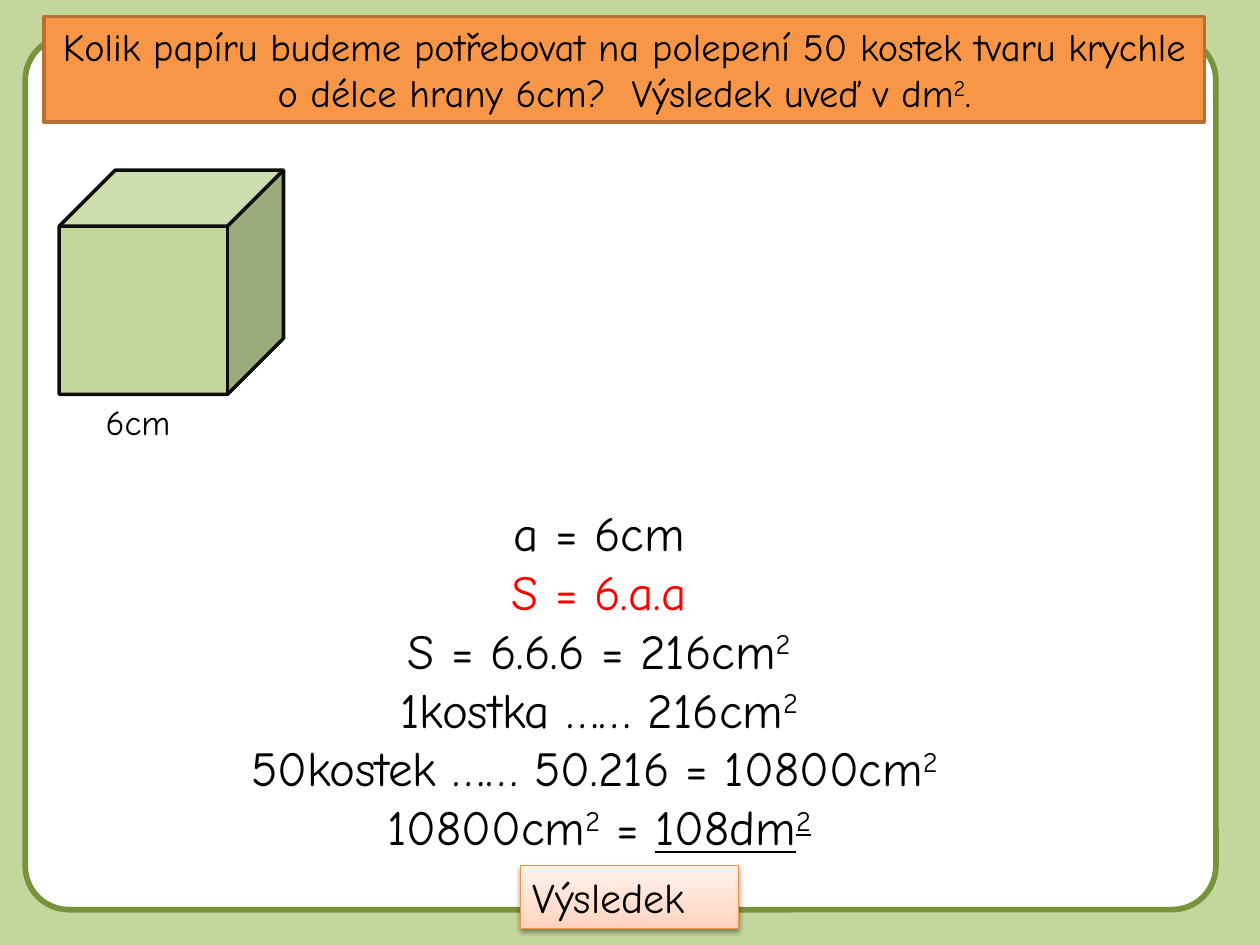
from lxml.etree import SubElement
from pptx import Presentation
from pptx.dml.color import RGBColor
from pptx.enum.shapes import MSO_SHAPE
from pptx.enum.text import MSO_ANCHOR, MSO_AUTO_SIZE, PP_ALIGN
from pptx.oxml import parse_xml
from pptx.oxml.ns import nsdecls, qn
from pptx.util import Inches, Pt

COLORS = {
    "back": "C3D69B", "panel": "FFFFFF", "frame": "77933C",
    "title": "F79646", "edge": "B76F34", "cube": "C3D69B",
    "ink": "0D0D0D", "text": "000000", "rule": "FF0000", "button": "F69240",
}
FADE = [(0, "FFD2BD"), (35, "FFDED0"), (100, "FFF2ED")]


def color(name):
    return RGBColor.from_string(COLORS[name])


def shadow(blur, dist, alpha):
    return parse_xml(
        f'<a:effectLst {nsdecls("a")}><a:outerShdw blurRad="{Pt(blur)}" '
        f'dist="{Pt(dist)}" dir="5400000" rotWithShape="0">'
        f'<a:srgbClr val="{COLORS["text"]}"><a:alpha val="{alpha * 1000}"/>'
        '</a:srgbClr></a:outerShdw></a:effectLst>')


class Painter:
    font = "Comic Neue"

    def __init__(self, slide):
        self.slide = slide

    def ground(self, name):
        fill = self.slide.background.fill
        fill.solid()
        fill.fore_color.rgb = color(name)

    def shape(self, kind, box, fill, line, width):
        item = self.slide.shapes.add_shape(kind, *map(Inches, box))
        item.shadow.inherit = False
        if fill:
            item.fill.solid()
            item.fill.fore_color.rgb = color(fill)
        item.line.color.rgb = color(line)
        item.line.width = Pt(width)
        return item

    def label(self, box):
        return self.slide.shapes.add_textbox(*map(Inches, box))

    def fade(self, item, stops):
        # Three-stop gradient running upwards
        item.fill.gradient()
        item.fill.gradient_angle = 90
        grad = item._element.spPr.find(qn("a:gradFill"))
        chain = grad.find(qn("a:gsLst"))
        for stop in list(chain):
            chain.remove(stop)
        for pos, value in stops:
            stop = SubElement(chain, qn("a:gs"), pos=str(pos * 1000))
            SubElement(stop, qn("a:srgbClr"), val=value)

    def glow(self, item, *style):
        props = item._element.spPr
        props.replace(props.find(qn("a:effectLst")), shadow(*style))

    def text(self, item, lines, size, align=PP_ALIGN.LEFT,
             anchor=MSO_ANCHOR.TOP, shade=False):
        """Each line is a colour and runs; ^ lifts a run, _ underlines it."""
        frame = item.text_frame
        style = {"word_wrap": True, "vertical_anchor": anchor,
                 "auto_size": MSO_AUTO_SIZE.SHAPE_TO_FIT_TEXT}
        for key, value in style.items():
            setattr(frame, key, value)
        for num, (tint, parts) in enumerate(lines):
            para = frame.add_paragraph() if num else frame.paragraphs[0]
            para.alignment = align
            for part in parts:
                words = part.lstrip("^_")
                marks = part[:len(part) - len(words)]
                run = para.add_run()
                run.text = words
                look = {"name": self.font, "size": Pt(size),
                        "underline": "_" in marks or None}
                for key, value in look.items():
                    setattr(run.font, key, value)
                run.font.color.rgb = color(tint)
                props = run._r.get_or_add_rPr()
                if "^" in marks:
                    props.set("baseline", "30000")
                if shade:
                    props.find(qn("a:latin")).addprevious(shadow(3, 3, 40))


def main():
    deck = Presentation()
    deck.slide_width, deck.slide_height = Inches(10), Inches(7.5)
    art = Painter(deck.slides.add_slide(deck.slide_layouts[6]))

    # Background and framed panel
    art.ground("back")
    panel = art.shape(MSO_SHAPE.ROUNDED_RECTANGLE, (0.2, 0.29, 9.45, 6.93),
                      "panel", "frame", 3.25)
    panel.adjustments[0] = 0.05

    # Question
    title = art.shape(MSO_SHAPE.RECTANGLE, (0.35, 0.13, 9.21, 0.84),
                      "title", "edge", 2)
    art.text(title, [("text", [
        "Kolik papíru budeme potřebovat na polepení 50 kostek tvaru krychle "
        "o délce hrany 6cm?  Výsledek uveď v dm", "^2", "."])],
        22, PP_ALIGN.CENTER, MSO_ANCHOR.MIDDLE)

    # Edge length
    art.text(art.label((0.74, 3.13, 0.94, 0.44)), [("text", ["6cm"])], 20)

    # Result button
    button = art.shape(MSO_SHAPE.RECTANGLE, (4.13, 6.87, 1.73, 0.5),
                       None, "button", 0.75)
    art.fade(button, FADE)
    art.glow(button, 3.1, 1.6, 38)
    art.text(button, [("text", ["Výsledek"])], 24)

    # Solution steps
    steps = [
        ("text", ["a = 6cm"]),
        ("rule", ["S = 6.a.a"]),
        ("text", ["S = 6.6.6 = 216cm", "^2"]),
        ("text", ["1kostka …… 216cm", "^2"]),
        ("text", ["50kostek …… 50.216 = 10800cm", "^2 "]),
        ("text", ["10800cm", "^2", " = ", "_108dm", "^_2"]),
    ]
    art.text(art.label((1.58, 3.94, 6.35, 2.93)), steps, 28,
             PP_ALIGN.CENTER, shade=True)

    # Cube
    art.shape(MSO_SHAPE.CUBE, (0.47, 1.35, 1.78, 1.78), "cube", "ink", 2)

    deck.save("out.pptx")


if __name__ == "__main__":
    main()
